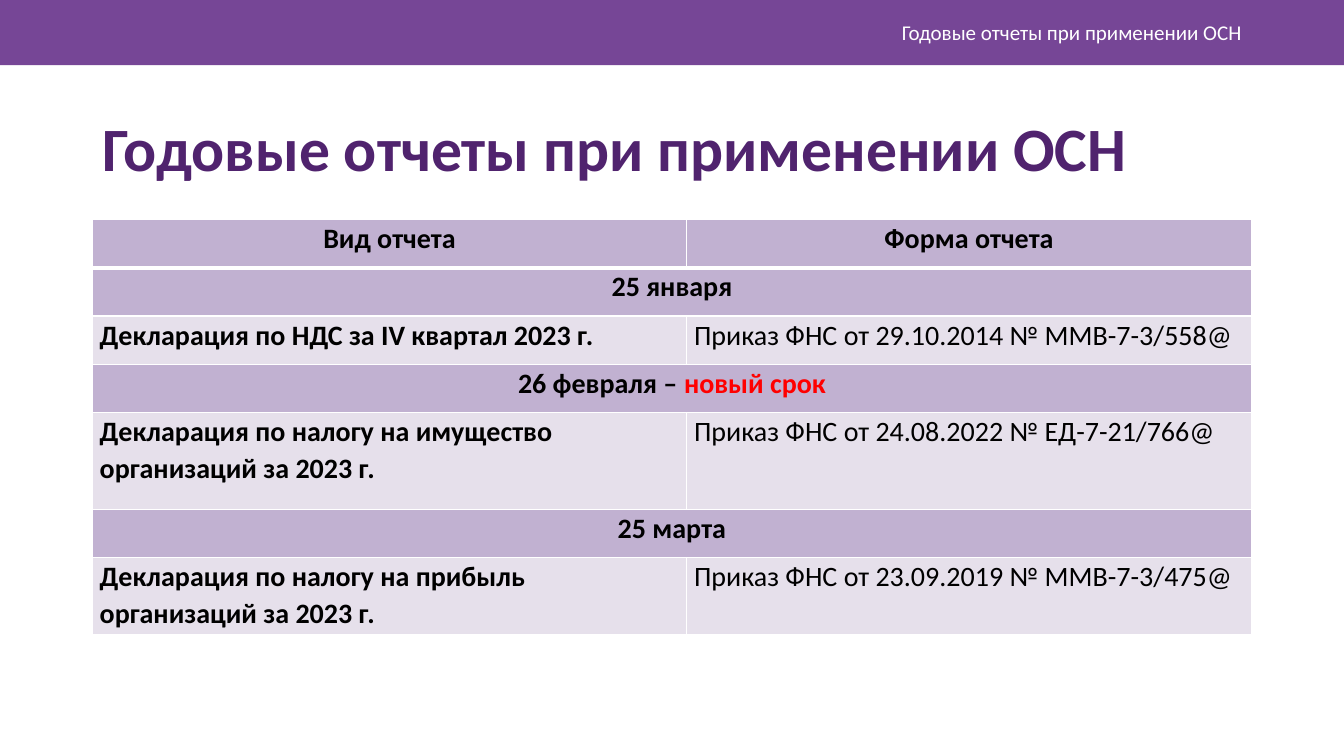
from dataclasses import dataclass

from lxml import etree
from pptx import Presentation
from pptx import util as u
from pptx.dml.color import RGBColor
from pptx.enum import shapes, text
from pptx.oxml.ns import qn

EMU_PER_PX = 9525
TITLE = "Годовые отчеты при применении ОСН"


@dataclass(frozen=True)
class Theme:
    font: str = "Calibri"
    white: str = "FFFFFF"
    black: str = "000000"
    red: str = "FF0000"
    band: str = "764696"
    title: str = "50236E"
    section: str = "987DB3"
    entry: str = "E6E0EB"
    section_alpha: int = 60
    header_size: int = 15
    title_size: int = 44
    table_size: int = 20
    border: int = 1
    header_border: int = 3


T = Theme()


@dataclass(frozen=True)
class Run:
    text: str
    size: int = T.table_size
    color: str = T.black
    bold: bool = True


@dataclass(frozen=True)
class Row:
    cells: tuple[tuple[Run, ...], ...]
    height: int
    section: bool = False


@dataclass(frozen=True)
class TextBox:
    box: tuple[int, int, int, int]
    run: Run
    align: text.PP_ALIGN
    anchor: text.MSO_ANCHOR
    spacing: float


def section(*runs: Run) -> Row:
    return Row((runs,), 46, True)


def entry(report: str, form: str, height: int) -> Row:
    return Row(((Run(report),), (Run(form, bold=False),)), height)


TEXTS = (
    TextBox((340, 12, 852, 38), Run(TITLE, T.header_size, T.white, False),
            text.PP_ALIGN.RIGHT, text.MSO_ANCHOR.MIDDLE, 1.0),
    TextBox((88, 108, 1104, 562), Run(TITLE, T.title_size, T.title),
            text.PP_ALIGN.LEFT, text.MSO_ANCHOR.TOP, 0.9),
)
COLUMNS = (566, 538)
ROWS = (
    Row(((Run("Вид отчета"),), (Run("Форма отчета"),)), 46, True),
    section(Run("25 января")),
    entry("Декларация по НДС за IV квартал 2023 г.",
          "Приказ ФНС от 29.10.2014 № ММВ-7-3/558@", 46),
    section(Run("26 февраля – "), Run("новый срок", color=T.red)),
    entry("Декларация по налогу на имущество организаций за 2023 г.",
          "Приказ ФНС от 24.08.2022 № ЕД-7-21/766@", 92),
    section(Run("25 марта")),
    entry("Декларация по налогу на прибыль организаций за 2023 г.",
          "Приказ ФНС от 23.09.2019 № ММВ-7-3/475@", 73),
)


def px(n: int) -> u.Emu:
    return u.Emu(n * EMU_PER_PX)


def rgb(color: str) -> RGBColor:
    return RGBColor.from_string(color)


def write(tf, runs: tuple[Run, ...], align: text.PP_ALIGN, spacing: float) -> None:
    tf.word_wrap = True
    p = tf.paragraphs[0]
    p.alignment = align
    p.line_spacing = spacing
    for run in runs:
        r = p.add_run()
        r.text = run.text
        r.font.name = T.font
        r.font.size = u.Pt(run.size)
        r.font.bold = run.bold
        r.font.color.rgb = rgb(run.color)


def add_text(s, item: TextBox) -> None:
    tf = s.shapes.add_textbox(*map(px, item.box)).text_frame
    tf.vertical_anchor = item.anchor
    write(tf, (item.run,), item.align, item.spacing)


def add_band(s) -> None:
    sp = s.shapes.add_shape(shapes.MSO_SHAPE.RECTANGLE, 0, 0, px(1280), px(62))
    sp.shadow.inherit = False
    sp.fill.solid()
    sp.fill.fore_color.rgb = rgb(T.band)
    sp.line.fill.background()


def set_borders(cell, top: int, bottom: int) -> None:
    tc_pr = cell._tc.get_or_add_tcPr()
    widths = {"a:lnL": T.border, "a:lnR": T.border, "a:lnT": top, "a:lnB": bottom}
    for tag, width in widths.items():
        ln = etree.SubElement(tc_pr, qn(tag), w=str(u.Pt(width)))
        fill = etree.SubElement(ln, qn("a:solidFill"))
        etree.SubElement(fill, qn("a:srgbClr"), val=T.white)


def set_fill(cell, is_section: bool) -> None:
    cell.fill.solid()
    cell.fill.fore_color.rgb = rgb(T.section if is_section else T.entry)
    if is_section:
        color = cell._tc.tcPr.find(qn("a:solidFill")).find(qn("a:srgbClr"))
        etree.SubElement(color, qn("a:alpha"), val=str(T.section_alpha * 1000))


def add_reports(s) -> None:
    height = sum(row.height for row in ROWS)
    table = s.shapes.add_table(len(ROWS), len(COLUMNS), px(88), px(209),
                               px(sum(COLUMNS)), px(height)).table
    for column, width in zip(table.columns, COLUMNS):
        column.width = px(width)
    for i, row in enumerate(ROWS):
        table.rows[i].height = px(row.height)
        if len(row.cells) == 1:
            table.cell(i, 0).merge(table.cell(i, len(COLUMNS) - 1))
        for j in range(len(COLUMNS)):
            cell = table.cell(i, j)
            cell.margin_left = cell.margin_right = px(7)
            cell.margin_top = cell.margin_bottom = 0
            set_borders(cell, T.header_border if i == 1 else T.border,
                        T.header_border if i == 0 else T.border)
            set_fill(cell, row.section)
        align = text.PP_ALIGN.CENTER if row.section else text.PP_ALIGN.LEFT
        for j, runs in enumerate(row.cells):
            write(table.cell(i, j).text_frame, runs, align, 1.07)


def main() -> None:
    prs = Presentation()
    prs.slide_width, prs.slide_height = px(1280), px(720)
    s = prs.slides.add_slide(prs.slide_layouts[6])
    add_band(s)
    for item in TEXTS:
        add_text(s, item)
    add_reports(s)
    prs.save("out.pptx")


if __name__ == "__main__":
    main()
